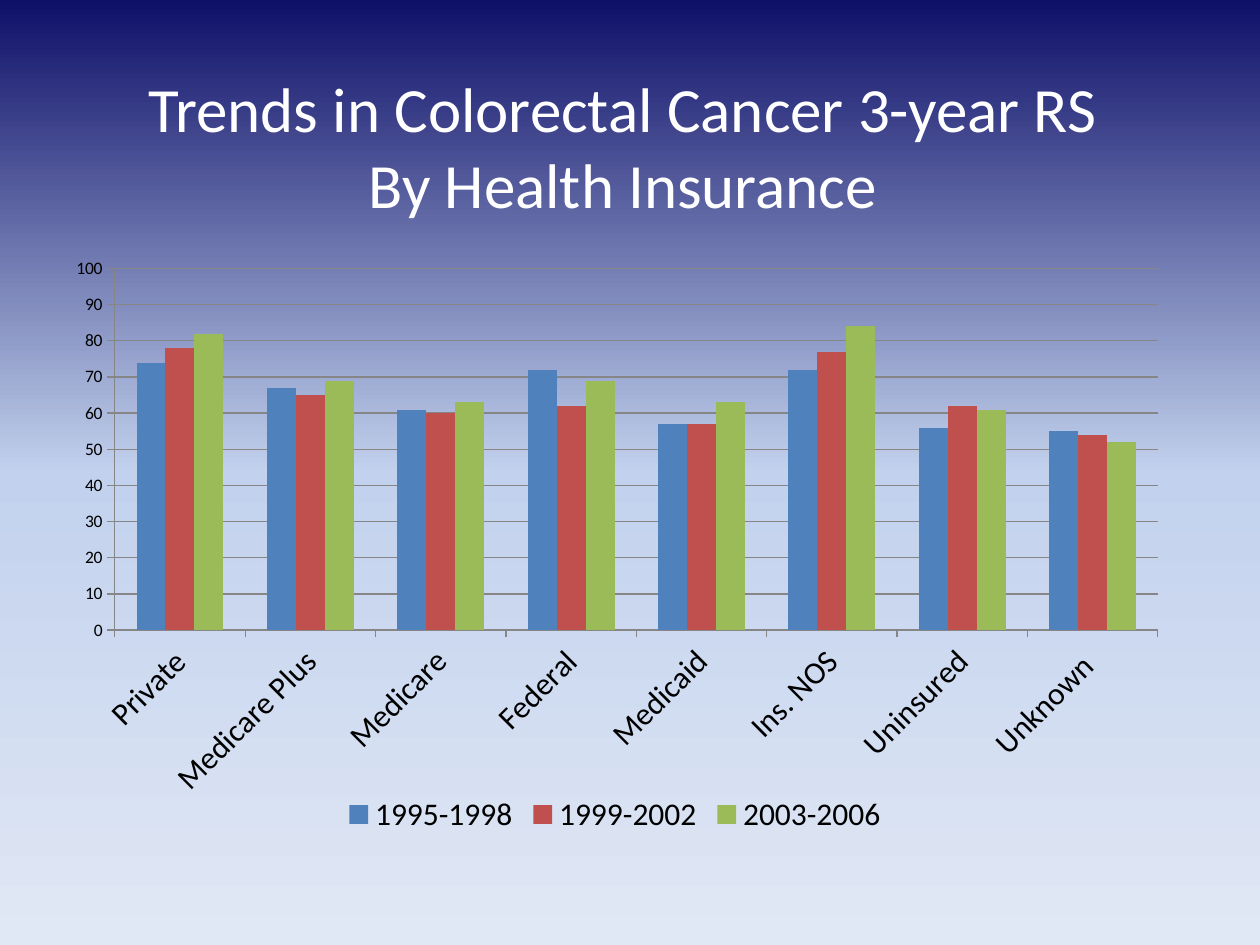
from copy import deepcopy

from pptx import Presentation
from pptx.chart.data import CategoryChartData
from pptx.dml.color import RGBColor
from pptx.enum.chart import XL_CHART_TYPE, XL_LEGEND_POSITION, XL_TICK_MARK
from pptx.enum.text import MSO_ANCHOR, PP_ALIGN
from pptx.oxml import parse_xml
from pptx.oxml.ns import nsdecls, qn
from pptx.util import Emu, Pt

PX_PER_INCH = 126
FONT = "Calibri"
BACKGROUND_STOPS = [(0, "0E1068"), (0.5, "C2D1ED"), (1, "E1E8F5")]
TITLE_LINES = ["Trends in Colorectal Cancer 3-year RS ", "By Health Insurance "]
INSURANCE = ["Private", "Medicare Plus", "Medicare", "Federal",
             "Medicaid", "Ins. NOS", "Uninsured", "Unknown "]
PERIODS = [
    ("1995-1998", "4F81BD", [74, 67, 61, 72, 57, 72, 56, 55]),
    ("1999-2002", "C0504D", [78, 65, 60, 62, 57, 77, 62, 54]),
    ("2003-2006", "9BBB59", [82, 69, 63, 69, 63, 84, 61, 52]),
]
PLOT_AREA = {"x": 0.055, "y": 0.093, "w": 0.928, "h": 0.574}


def px(length):
    return Emu(round(length * 914400 / PX_PER_INCH))


def color(hex_string):
    return RGBColor.from_string(hex_string)


def format_font(font, size, hex_string):
    font.name = FONT
    font.size = Pt(size)
    font.color.rgb = color(hex_string)


def paint_background(slide):
    fill = slide.background.fill
    fill.gradient()
    fill.gradient_angle = 270
    first_stop = next(slide.element.iter(qn("a:gs")))
    first_stop.addnext(deepcopy(first_stop))
    for stop, (position, hex_string) in zip(fill.gradient_stops, BACKGROUND_STOPS):
        stop.position = position
        stop.color.rgb = color(hex_string)


def add_title(slide, left, top, width, height):
    title = slide.shapes.title
    title.left, title.top, title.width, title.height = map(px, (left, top, width, height))
    frame = title.text_frame
    frame.word_wrap = True
    frame.vertical_anchor = MSO_ANCHOR.MIDDLE
    for index, line in enumerate(TITLE_LINES):
        paragraph = frame.add_paragraph() if index else frame.paragraphs[0]
        paragraph.alignment = PP_ALIGN.CENTER
        run = paragraph.add_run()
        run.text = line
        format_font(run.font, 36, "FFFFFF")


def fix_plot_area(chart):
    """Pin the inner plot area to fractions of the chart."""
    modes = "".join(f'<c:{side}Mode val="edge"/>' for side in "xy")
    sizes = "".join(f'<c:{side} val="{value}"/>' for side, value in PLOT_AREA.items())
    layout = parse_xml(
        f'<c:layout {nsdecls("c")}><c:manualLayout><c:layoutTarget val="inner"/>'
        f"{modes}{sizes}</c:manualLayout></c:layout>")
    plot_area = next(chart.element.iter(qn("c:plotArea")))
    for old_layout in plot_area.findall(qn("c:layout")):
        plot_area.remove(old_layout)
    plot_area.insert(0, layout)


def format_axis(axis, size):
    axis.major_tick_mark = XL_TICK_MARK.OUTSIDE
    axis.minor_tick_mark = XL_TICK_MARK.NONE
    format_font(axis.tick_labels.font, size, "000000")
    format_line(axis.format.line)


def format_line(line):
    line.color.rgb = color("868686")
    line.width = Pt(0.75)


def add_survival_chart(slide, left, top, width, height):
    data = CategoryChartData(number_format="0")
    data.categories = INSURANCE
    for name, _, values in PERIODS:
        data.add_series(name, values)
    chart = slide.shapes.add_chart(
        XL_CHART_TYPE.COLUMN_CLUSTERED, *map(px, (left, top, width, height)), data).chart
    format_font(chart.font, 10, "000000")
    chart.has_title = False
    fix_plot_area(chart)

    plot = chart.plots[0]
    plot.vary_by_categories = False
    plot.gap_width = 150
    plot.overlap = 0
    for series, (_, hex_string, _) in zip(plot.series, PERIODS):
        series.format.fill.solid()
        series.format.fill.fore_color.rgb = color(hex_string)

    category_axis, value_axis = chart.category_axis, chart.value_axis
    format_axis(category_axis, 18)
    category_axis._element.txPr.find(qn("a:bodyPr")).set("rot", "-2700000")
    format_axis(value_axis, 10)
    value_axis.minimum_scale = 0
    value_axis.maximum_scale = 100
    value_axis.major_unit = 10
    value_axis.has_major_gridlines = True
    format_line(value_axis.major_gridlines.format.line)

    chart.has_legend = True
    chart.legend.position = XL_LEGEND_POSITION.BOTTOM
    chart.legend.include_in_layout = False
    format_font(chart.legend.font, 18, "000000")


def main():
    presentation = Presentation()
    presentation.slide_width, presentation.slide_height = px(1260), px(945)
    slide = presentation.slides.add_slide(presentation.slide_layouts[5])
    paint_background(slide)
    add_survival_chart(slide, 53, 210, 1124, 630)
    add_title(slide, 0, 63, 1260, 165)
    presentation.save("out.pptx")


if __name__ == "__main__":
    main()
